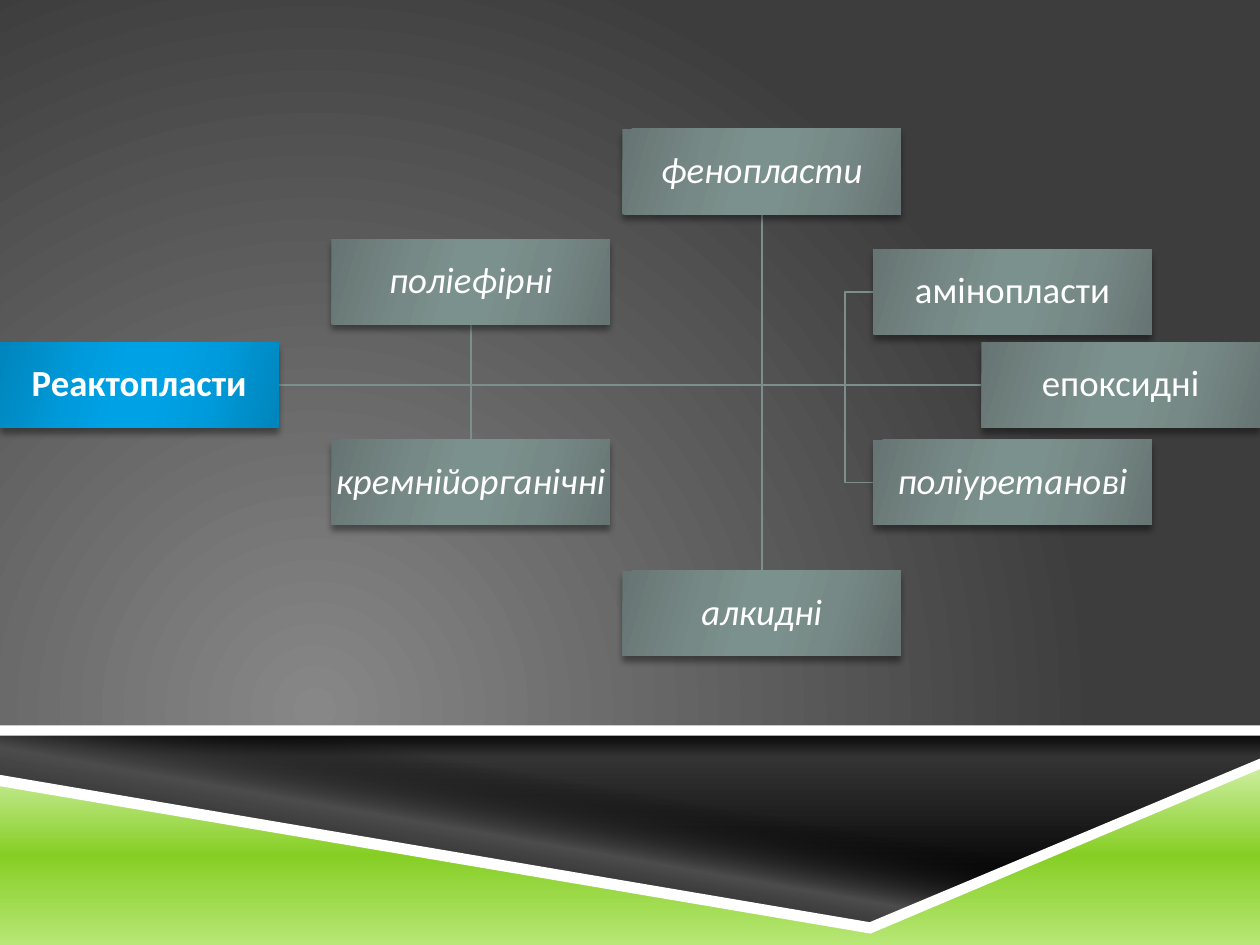
from dataclasses import dataclass
from lxml import etree
from pptx import Presentation
from pptx.dml.color import RGBColor
from pptx.enum.shapes import MSO_CONNECTOR as Connector, MSO_SHAPE as Shape
from pptx.enum.text import MSO_ANCHOR as Anchor, PP_ALIGN as Align
from pptx.oxml.ns import qn
from pptx.util import Pt


@dataclass(frozen=True)
class Theme:
    font: str = "Calibri"
    label_size: float = 21
    line_width: float = 1
    white: str = "FFFFFF"
    line: str = "7D8F8C"
    shadow: str = "000000"
    background: tuple = ((0, "878787"), (100, "3D3D3D"))
    green: tuple = ((0, "CFEFA4"), (50, "86CE24"), (100, "B7E776"))
    black: tuple = ((0, "000000"), (14, "333333"), (83, "000000"))
    sheen: tuple = ((41, "000000", 0), (57, "4D4D4D"), (100, "000000", 0))
    blue: tuple = ("0085BC", "009BDC", "00A2E6")
    grey: tuple = ("667573", "778986", "7B918D")


def glossy(colors):
    edge, middle, centre = colors
    return ((0, edge), (30, middle), (45, centre), (55, centre), (73, middle), (100, edge))


def add_element(parent, tag, **attributes):
    values = {name: str(value) for name, value in attributes.items()}
    return etree.SubElement(parent, qn(tag), values)


def add_color(parent, color, alpha=100):
    element = add_element(parent, "a:srgbClr", val=color)
    if alpha < 100:
        add_element(element, "a:alpha", val=alpha * 1000)


class SlideBuilder:
    def __init__(self, slide, theme):
        self.slide = slide
        self.theme = theme

    def gradient(self, fill, owner, stops, angle=None):
        fill.gradient()
        gradient = next(owner.iter(qn("a:gradFill")))
        for child in list(gradient):
            gradient.remove(child)
        stop_list = add_element(gradient, "a:gsLst")
        for position, *color in stops:
            add_color(add_element(stop_list, "a:gs", pos=position * 1000), *color)
        if angle is None:
            circle = add_element(gradient, "a:path", path="circle")
            add_element(circle, "a:fillToRect", l=50000, t=100000, r=100000, b=50000)
        else:
            add_element(gradient, "a:lin", ang=angle * 60000, scaled=0)

    def background(self, stops):
        self.gradient(self.slide.background.fill, self.slide.element, stops)

    def paint(self, shape, fill, angle=90):
        shape.shadow.inherit = False
        shape.line.fill.background()
        if isinstance(fill, str):
            shape.fill.solid()
            shape.fill.fore_color.rgb = RGBColor.from_string(fill)
        else:
            self.gradient(shape.fill, shape.element.spPr, fill, angle)

    def outline(self, points, close):
        start, *rest = [(Pt(x), Pt(y)) for x, y in points]
        builder = self.slide.shapes.build_freeform(*start)
        builder.add_line_segments(rest, close=close)
        return builder.convert_to_shape()

    def polygon(self, points, fill, angle=90):
        self.paint(self.outline(points, True), fill, angle)

    def rectangle(self, left, top, width, height, fill, angle=90):
        shape = self.slide.shapes.add_shape(
            Shape.RECTANGLE, Pt(left), Pt(top), Pt(width), Pt(height))
        self.paint(shape, fill, angle)
        return shape

    def style_line(self, line):
        line.color.rgb = RGBColor.from_string(self.theme.line)
        line.width = Pt(self.theme.line_width)

    def branch(self, points):
        shape = self.outline(points, False)
        shape.shadow.inherit = False
        shape.fill.background()
        self.style_line(shape.line)

    def trunk(self, left, right, y):
        connector = self.slide.shapes.add_connector(
            Connector.STRAIGHT, Pt(left), Pt(y), Pt(right), Pt(y))
        self.style_line(connector.line)
        add_element(connector.element.spPr, "a:effectLst")
        return connector

    def box(self, label, centre, size, colors, bold=False, italic=False):
        (x, y), (width, height) = centre, size
        shape = self.rectangle(
            x - width / 2, y - height / 2, width, height, glossy(colors), 16)
        effects = shape.element.spPr.find(qn("a:effectLst"))
        shadow = add_element(effects, "a:outerShdw", blurRad=Pt(4), dist=Pt(3.3),
                             dir=90 * 60000, rotWithShape=0)
        add_color(shadow, self.theme.shadow, 40)
        frame = shape.text_frame
        frame.text = label
        frame.word_wrap = True
        frame.vertical_anchor = Anchor.MIDDLE
        frame.margin_left = frame.margin_right = Pt(1)
        frame.margin_top = frame.margin_bottom = Pt(1)
        paragraph = frame.paragraphs[0]
        paragraph.alignment = Align.CENTER
        paragraph.line_spacing = 0.9
        font = paragraph.runs[0].font
        font.name, font.size = self.theme.font, Pt(self.theme.label_size)
        font.bold, font.italic = bold, italic
        font.color.rgb = RGBColor.from_string(self.theme.white)
        return shape


def draw_footer(builder, theme):
    builder.polygon(
        [(0, 447), (498, 531), (720, 437), (720, 540), (0, 540)], theme.green)
    valley = [(0, 417.5), (720, 417), (720, 437), (496, 530.5), (0, 445.5)]
    builder.polygon(valley, theme.black)
    builder.polygon(valley, theme.sheen, 100)
    builder.rectangle(0, 414.5, 720, 5.8, theme.white)
    builder.polygon([(0, 442.8), (497, 527), (720, 433.5), (720, 439.5),
                     (497.5, 533.5), (0, 449.3)], theme.white)


def draw_tree(builder, theme):
    size = width, height = 159.2, 48.6
    axis, bus = 220, 483
    root_centre, end_centre = (width / 2, axis), (720 - width / 2, axis)
    columns = [
        ("алкидні", (435.3, 350.5)),
        ("фенопласти", (435.3, 98)),
        ("кремнійорганічні", (269, 275.7)),
        ("поліефірні", (269, 161)),
    ]
    sides = [
        ("поліуретанові", (578.6, 275.7), True),
        ("амінопласти", (578.6, 166.8), False),
    ]
    for _, (x, y) in columns:
        edge = y - height / 2 if y > axis else y + height / 2
        builder.branch([(width, axis), (x, axis), (x, edge)])
    for _, (x, y), _ in sides:
        builder.branch([(width, axis), (bus, axis), (bus, y), (x - width / 2, y)])
    trunk = builder.trunk(width, 720 - width, axis)

    root = builder.box("Реактопласти", root_centre, size, theme.blue, bold=True)
    for label, centre, italic in sides:
        builder.box(label, centre, size, theme.grey, italic=italic)
    end = builder.box("епоксидні", end_centre, size, theme.grey)
    for label, centre in columns:
        builder.box(label, centre, size, theme.grey, italic=True)
    trunk.begin_connect(root, 3)
    trunk.end_connect(end, 1)


def main():
    presentation = Presentation()
    presentation.slide_width, presentation.slide_height = Pt(720), Pt(540)
    slide = presentation.slides.add_slide(presentation.slide_layouts[6])
    theme = Theme()
    builder = SlideBuilder(slide, theme)
    builder.background(theme.background)
    draw_footer(builder, theme)
    draw_tree(builder, theme)
    presentation.save("out.pptx")


if __name__ == "__main__":
    main()
